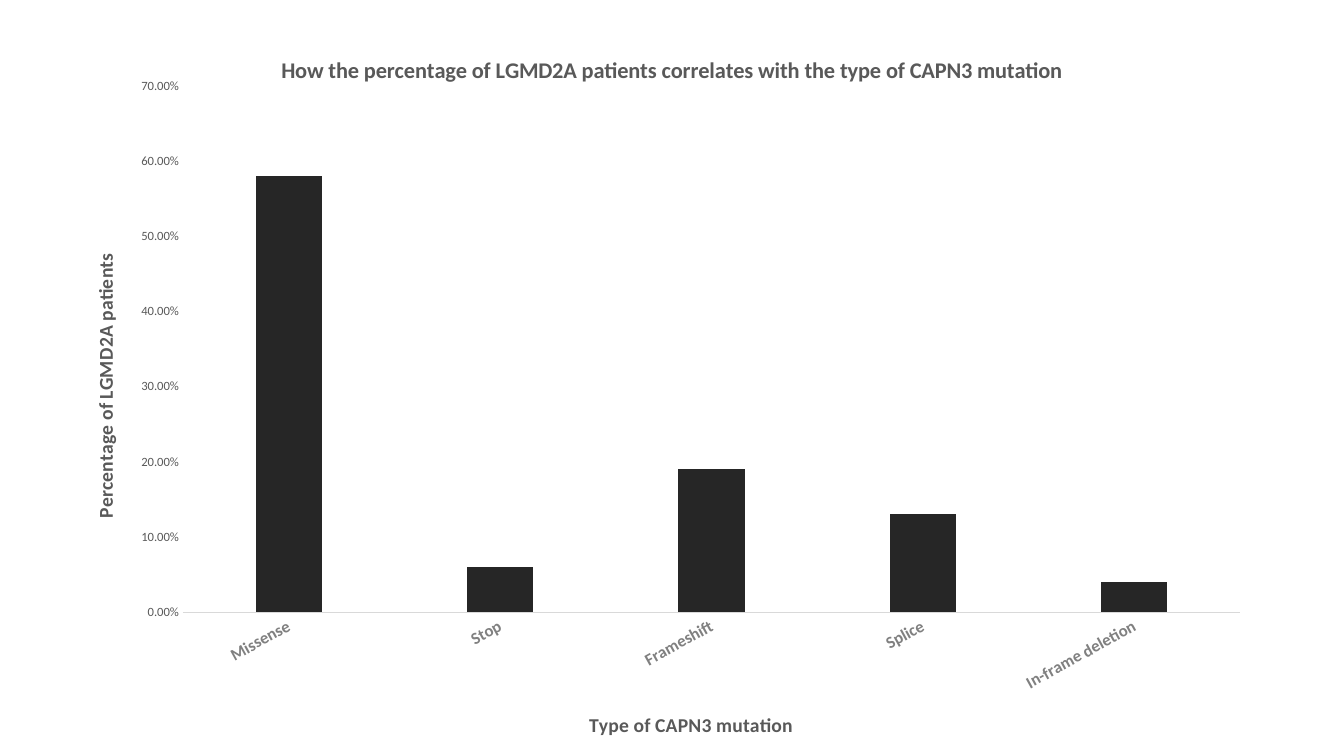
from lxml import etree
from pptx import Presentation
from pptx.chart.data import CategoryChartData
from pptx.dml.color import RGBColor
from pptx.enum.chart import XL_CHART_TYPE, XL_TICK_MARK
from pptx.oxml.ns import qn
from pptx.util import Inches, Pt

COLUMN_CLUSTERED = XL_CHART_TYPE.COLUMN_CLUSTERED
NO_TICKS = XL_TICK_MARK.NONE

BLACK = RGBColor(0x00, 0x00, 0x00)
BAR_COLOR = RGBColor(0x26, 0x26, 0x26)
TITLE_COLOR = RGBColor(0x59, 0x59, 0x59)
CATEGORY_COLOR = RGBColor(0x80, 0x80, 0x80)
AXIS_COLOR = RGBColor(0xD9, 0xD9, 0xD9)

PATIENT_SHARES = {
    "Missense": 0.58,
    "Stop": 0.06,
    "Frameshift": 0.19,
    "Splice": 0.13,
    "In-frame deletion": 0.04,
}


class ChartSlide:
    """Holds the font and the slide; lengths are shares of the slide's size."""

    def __init__(self, presentation, font_name):
        self.width = presentation.slide_width
        self.height = presentation.slide_height
        self.font_name = font_name
        self.slide = presentation.slides.add_slide(presentation.slide_layouts[6])

    def style_font(self, font, size, color, bold=False):
        font.name = self.font_name
        font.size = Pt(size)
        font.bold = bold
        font.color.rgb = color

    def place(self, parent, index, target=None, **shares):
        """Give a chart part a manual layout, in shares of the chart."""
        for old_layout in parent.findall(qn("c:layout")):
            parent.remove(old_layout)
        layout = etree.Element(qn("c:layout"))
        manual = etree.SubElement(layout, qn("c:manualLayout"))
        settings = {"layoutTarget": target} if target else {}
        settings.update(xMode="edge", yMode="edge", **shares)
        for tag, value in settings.items():
            etree.SubElement(manual, qn("c:" + tag)).set("val", str(value))
        parent.insert(index, layout)

    def rotate(self, body, degrees):
        body.set("rot", str(degrees * 60000))
        body.set("vert", "horz")

    def add_column_chart(self, left, top, width, height, values):
        chart_data = CategoryChartData(number_format="0.00%")
        chart_data.categories = list(values)
        chart_data.add_series("Series 1", list(values.values()))
        frame = self.slide.shapes.add_chart(
            COLUMN_CLUSTERED,
            round(left * self.width), round(top * self.height),
            round(width * self.width), round(height * self.height),
            chart_data)
        chart = frame.chart
        chart.has_legend = False
        self.style_font(chart.font, 10, BLACK)
        plot = chart.plots[0]
        plot.gap_width = 219
        plot.overlap = -27
        plot.vary_by_categories = False
        fill = plot.series[0].format.fill
        fill.solid()
        fill.fore_color.rgb = BAR_COLOR
        return chart

    def add_title(self, owner, text, size, x, y):
        """Title a chart or an axis at a fixed place."""
        owner.has_title = True
        title = owner.chart_title if hasattr(owner, "chart_title") else owner.axis_title
        paragraph = title.text_frame.paragraphs[0]
        paragraph.text = text
        self.style_font(paragraph.font, size, TITLE_COLOR, bold=True)
        self.place(title._element, 1, x=x, y=y)
        return title

    def style_axis(self, axis, size, color, bold=False):
        axis.has_major_gridlines = False
        axis.major_tick_mark = NO_TICKS
        axis.minor_tick_mark = NO_TICKS
        self.style_font(axis.tick_labels.font, size, color, bold)


def main():
    presentation = Presentation()
    presentation.slide_width = Inches(13.33)
    presentation.slide_height = Inches(7.5)
    chart_slide = ChartSlide(presentation, "Calibri")

    # Chart and plot area
    chart = chart_slide.add_column_chart(0.0655, 0.0405, 0.869, 1, PATIENT_SHARES)
    chart_slide.place(chart._chartSpace.chart.plotArea, 0, target="inner",
                      x=0.0813, y=0.0733, w=0.905, h=0.696)

    # Chart title
    title = chart_slide.add_title(
        chart,
        "How the percentage of LGMD2A patients correlates with the type of CAPN3 mutation",
        16, 0.162, 0.027)
    title.include_in_layout = False

    # Category axis with slanted labels
    category_axis = chart.category_axis
    chart_slide.style_axis(category_axis, 12, CATEGORY_COLOR, bold=True)
    category_axis.format.line.color.rgb = AXIS_COLOR
    category_axis.format.line.width = Pt(0.75)
    labels = category_axis._element.find(qn("c:txPr"))
    chart_slide.rotate(labels.find(qn("a:bodyPr")), -29)
    chart_slide.add_title(category_axis, "Type of CAPN3 mutation", 14, 0.426, 0.896)

    # Value axis
    value_axis = chart.value_axis
    chart_slide.style_axis(value_axis, 9, TITLE_COLOR)
    value_axis.minimum_scale = 0
    value_axis.maximum_scale = 0.7
    value_axis.major_unit = 0.1
    value_axis.tick_labels.number_format = "0.00%"
    value_axis.tick_labels.number_format_is_linked = False
    value_axis.format.line.fill.background()
    title = chart_slide.add_title(
        value_axis, "Percentage of LGMD2A patients", 14, 0, 0.29)
    chart_slide.rotate(title.text_frame._txBody.find(qn("a:bodyPr")), -90)

    presentation.save("out.pptx")


if __name__ == "__main__":
    main()
